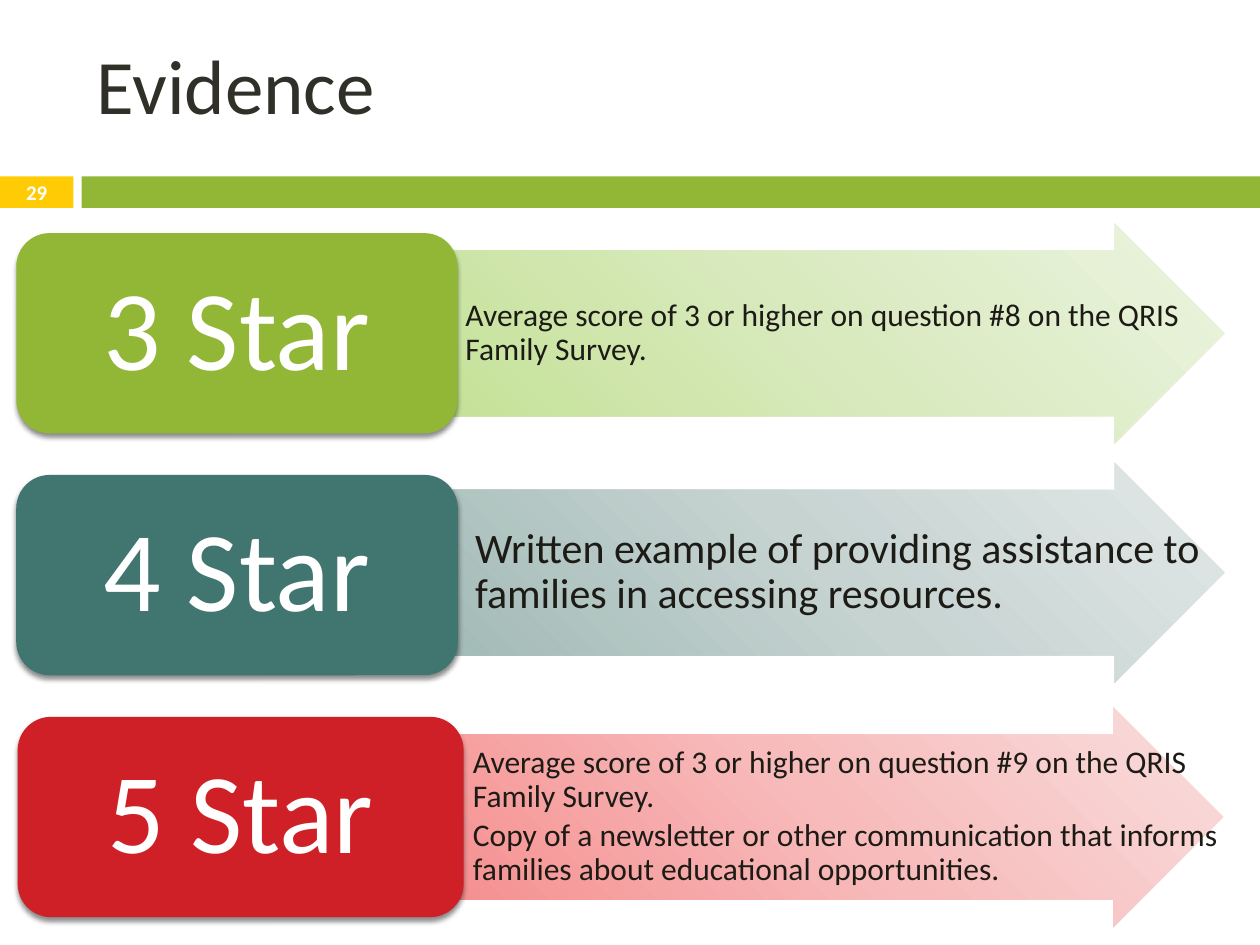
from pptx import Presentation
from pptx.dml.color import RGBColor
from pptx.enum.shapes import MSO_SHAPE
from pptx.enum.text import MSO_ANCHOR, MSO_AUTO_SIZE, PP_ALIGN
from pptx.oxml import parse_xml
from pptx.util import Pt

NS = 'xmlns:a="http://schemas.openxmlformats.org/drawingml/2006/main"'
FONT = "Calibri"
COLORS = {
    "gold": "FFCB05", "green": "92B635", "teal": "40766F", "red": "D02027",
    "title": "303029", "ink": "1D1B16", "white": "FFFFFF", "shade": "000000",
}
FADES = {
    "green": ("C4E195", "D9EABF", "ECF4E0"),
    "teal": ("A0B9B5", "C6D3D1", "E3E9E8"),
    "red": ("F58D8E", "F7BBBB", "FADEDE"),
}
TITLE = "Evidence"
NUMBER = "29"
# Lengths in points; "box" and "arrow" hold left and width.
ROWS = [
    {"label": "3 Star", "color": "green", "size": 18, "indent": 14.4,
     "box": (9.3, 252.2), "arrow": (250.6, 449.3), "top": 127.5,
     "lines": ["Average score of 3 or higher on question #8 on the QRIS Family Survey."]},
    {"label": "4 Star", "color": "teal", "size": 24, "indent": 19.2,
     "box": (9.3, 252.4), "arrow": (251.3, 448.6), "top": 264.2,
     "lines": ["Written example of providing assistance to families in accessing resources."]},
    {"label": "5 Star", "color": "red", "size": 18, "indent": 14.4,
     "box": (10.1, 254.9), "arrow": (254.9, 444.2), "top": 403.9,
     "lines": ["Average score of 3 or higher on question #9 on the QRIS Family Survey.",
               "Copy of a newsletter or other communication that informs "
               "families about educational opportunities."]},
]
BOX_TOP, BOX_STEP, BOX_H = 133.2, 138.2, 114.5
ARROW_H = 126
BAR_TOP, BAR_H = 100.8, 18


def rgb(name):
    return RGBColor.from_string(COLORS[name])


def place(item, area):
    for key, val in zip(("left", "top", "width", "height"), area):
        setattr(item, key, Pt(val))


def write(item, lines, size, color, align=PP_ALIGN.LEFT, pads=(7.2, 3.6, 7.2, 3.6),
          bold=False, space=None, after=0):
    frame = item.text_frame
    frame.text = "\n".join(lines)
    form = {"word_wrap": True, "auto_size": MSO_AUTO_SIZE.NONE,
            "vertical_anchor": MSO_ANCHOR.MIDDLE}
    for side, pad in zip(("left", "top", "right", "bottom"), pads):
        form["margin_" + side] = Pt(pad)
    for key, val in form.items():
        setattr(frame, key, val)
    for para in frame.paragraphs:
        for key, val in {"alignment": align, "line_spacing": space,
                         "space_after": Pt(after)}.items():
            setattr(para, key, val)
        font = para.runs[0].font
        for key, val in {"name": FONT, "size": Pt(size), "bold": bold}.items():
            setattr(font, key, val)
        font.color.rgb = rgb(color)


def draw(slide, kind, area, color=None):
    shape = slide.shapes.add_shape(kind, *map(Pt, area))
    shape.shadow.inherit = False
    shape.line.fill.background()
    if color:
        shape.fill.solid()
        shape.fill.fore_color.rgb = rgb(color)
    return shape


def fade(shape, tones):
    """Fill with a round gradient that starts at the lower left corner."""
    stops = "".join(f'<a:gs pos="{pos}"><a:srgbClr val="{tone}"/></a:gs>'
                    for pos, tone in zip((0, 50000, 100000), tones))
    grad = parse_xml(f'<a:gradFill {NS} rotWithShape="1"><a:gsLst>{stops}</a:gsLst>'
                     '<a:path path="circle"><a:fillToRect t="100000" r="100000"/>'
                     '</a:path></a:gradFill>')
    shape.line._ln.addprevious(grad)


def shade(shape):
    """Add a soft shadow just below the shape."""
    soft = parse_xml(f'<a:outerShdw {NS} blurRad="{Pt(3)}" dist="{Pt(2.4)}" dir="5400000" '
                     f'rotWithShape="0"><a:srgbClr val="{COLORS["shade"]}">'
                     '<a:alpha val="45000"/></a:srgbClr></a:outerShdw>')
    shape._element.spPr.find("{*}effectLst").append(soft)


def add_row(slide, row, top):
    left, width = row["arrow"]
    area = (left, row["top"], width, ARROW_H)
    arrow = draw(slide, MSO_SHAPE.RIGHT_ARROW, area)
    arrow.adjustments[0] = 0.75
    fade(arrow, FADES[row["color"]])

    note = slide.shapes.add_textbox(*map(Pt, area))
    write(note, row["lines"], row["size"], "ink", pads=(1 + row["indent"], 1, 1, 1),
          space=0.9, after=0.15 * row["size"])

    left, width = row["box"]
    box = draw(slide, MSO_SHAPE.ROUNDED_RECTANGLE, (left, top, width, BOX_H), row["color"])
    shade(box)
    write(box, [row["label"]], 65, "white", PP_ALIGN.CENTER,
          pads=(19.4, 10.1, 19.4, 10.1), space=0.9)


def main():
    deck = Presentation()
    deck.slide_width, deck.slide_height = Pt(720), Pt(540)
    slide = deck.slides.add_slide(deck.slide_layouts[5])

    title = slide.shapes.title
    place(title, (48, 0, 672, 96))
    write(title, [TITLE], 44, "title")

    badge = draw(slide, MSO_SHAPE.RECTANGLE, (0, BAR_TOP, 42, BAR_H), "gold")
    write(badge, [NUMBER], 11.9, "white", PP_ALIGN.CENTER, bold=True)
    draw(slide, MSO_SHAPE.RECTANGLE, (46.6, BAR_TOP, 673.4, BAR_H), "green")

    for num, row in enumerate(ROWS):
        add_row(slide, row, BOX_TOP + num * BOX_STEP)

    deck.save("out.pptx")


if __name__ == "__main__":
    main()
